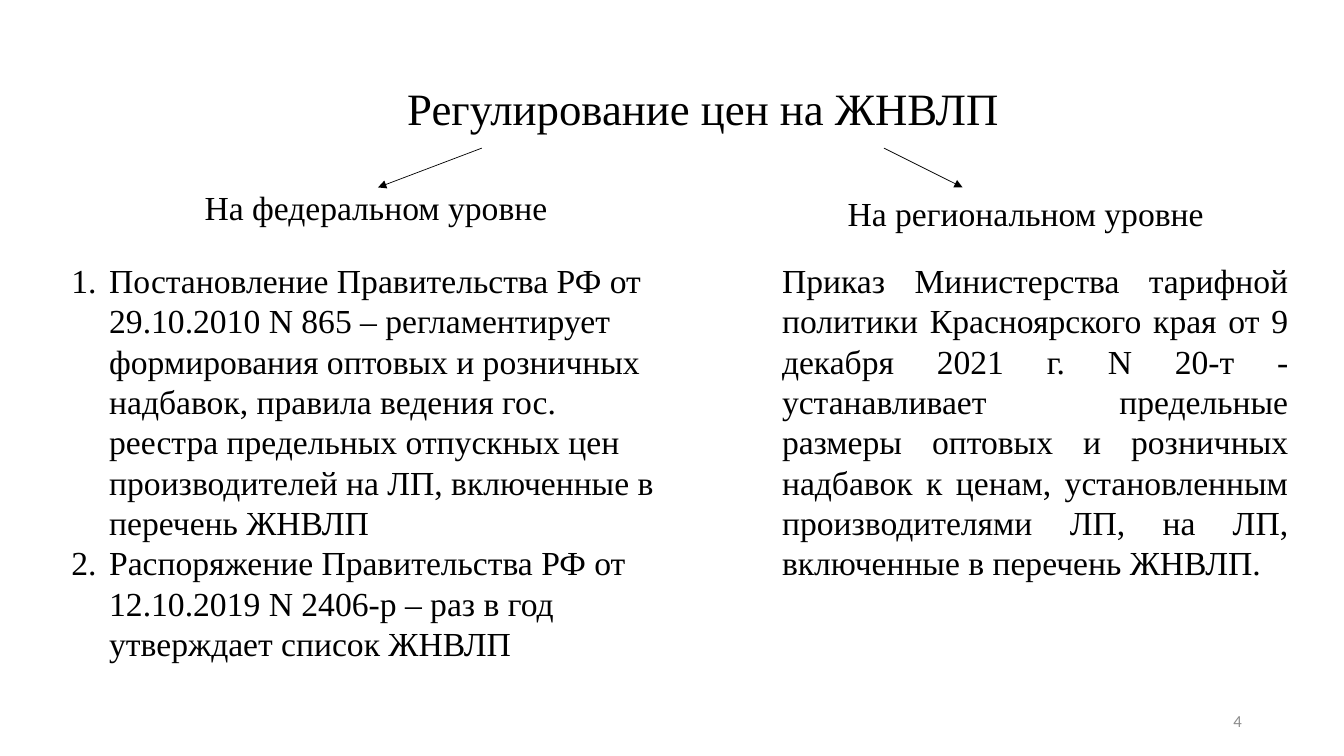
from dataclasses import dataclass

from lxml.etree import SubElement
from pptx import Presentation
from pptx.dml.color import RGBColor
from pptx.enum.shapes import MSO_CONNECTOR
from pptx.enum.text import MSO_ANCHOR, MSO_AUTO_SIZE, PP_ALIGN
from pptx.oxml.ns import qn
from pptx.util import Pt

COLOURS = {"text": "000000", "number": "8C8C8C"}
SERIF = "Times New Roman"
ARROW_TOP, ARROW_BOTTOM = 105.8, 133.9
BODY_TOP = 182.2
NUMBER_INDENT = 27


@dataclass
class TextBlock:
    left: float
    top: float
    width: float
    height: float
    paragraphs: list[str]
    size: float = 24
    font: str = SERIF
    colour: str = "text"
    align: PP_ALIGN = PP_ALIGN.LEFT
    anchor: MSO_ANCHOR = MSO_ANCHOR.TOP
    wrap: bool = False
    grow: bool = True
    numbered: bool = False


@dataclass
class Arrow:
    start: float
    end: float


TITLE = TextBlock(283.7, 54, 441.4, 46.1, ["Регулирование цен на ЖНВЛП"], size=32)

BLOCKS = [
    TextBlock(139, 130.3, 262, 36.4, ["На федеральном уровне"]),
    TextBlock(598.3, 133.9, 282.2, 36.4, ["На региональном уровне"]),
    TextBlock(43.9, BODY_TOP, 436.3, 298, [
        "Постановление Правительства РФ от 29.10.2010 N 865 – регламентирует "
        "формирования оптовых и розничных надбавок, правила ведения гос. реестра "
        "предельных отпускных цен производителей на ЛП, включенные в перечень ЖНВЛП",
        "Распоряжение Правительства РФ от 12.10.2019 N 2406-р – раз в год "
        "утверждает список ЖНВЛП",
    ], wrap=True, numbered=True),
    TextBlock(551.5, BODY_TOP, 375.8, 269.3, [
        "Приказ Министерства тарифной политики Красноярского края от 9 декабря "
        "2021 г. N 20-т - устанавливает предельные размеры оптовых и розничных "
        "надбавок к ценам, установленным производителями ЛП, на ЛП, включенные "
        "в перечень ЖНВЛП.",
    ], align=PP_ALIGN.JUSTIFY, wrap=True),
    TextBlock(678.2, 500.4, 216, 28.8, ["4"], size=12, font="Calibri", colour="number",
              align=PP_ALIGN.RIGHT, anchor=MSO_ANCHOR.MIDDLE, wrap=True, grow=False),
]

ARROWS = [Arrow(344.2, 270), Arrow(631.4, 687.6)]


def number_paragraph(para) -> None:
    properties = para._p.get_or_add_pPr()
    properties.set("marL", str(Pt(NUMBER_INDENT)))
    properties.set("indent", str(-Pt(NUMBER_INDENT)))
    SubElement(properties, qn("a:buAutoNum"), type="arabicPeriod")


def fill_box(box, block: TextBlock) -> None:
    box.left, box.top = Pt(block.left), Pt(block.top)
    box.width, box.height = Pt(block.width), Pt(block.height)
    frame = box.text_frame
    frame.word_wrap = block.wrap
    frame.auto_size = MSO_AUTO_SIZE.SHAPE_TO_FIT_TEXT if block.grow else MSO_AUTO_SIZE.NONE
    frame.vertical_anchor = block.anchor
    for index, text in enumerate(block.paragraphs):
        para = frame.add_paragraph() if index else frame.paragraphs[0]
        para.alignment = block.align
        if block.numbered:
            number_paragraph(para)
        span = para.add_run()
        span.text = text
        span.font.name = block.font
        span.font.size = Pt(block.size)
        span.font.color.rgb = RGBColor.from_string(COLOURS[block.colour])


def draw_arrow(page, arrow: Arrow) -> None:
    connector = page.shapes.add_connector(
        MSO_CONNECTOR.STRAIGHT, Pt(arrow.start), Pt(ARROW_TOP), Pt(arrow.end), Pt(ARROW_BOTTOM))
    connector.line.color.rgb = RGBColor.from_string(COLOURS["text"])
    connector.line.width = Pt(0.5)
    SubElement(connector.line._get_or_add_ln(), qn("a:tailEnd"), type="triangle")
    SubElement(connector._element.spPr, qn("a:effectLst"))


def main() -> None:
    deck = Presentation()
    deck.slide_width, deck.slide_height = Pt(960), Pt(540)
    page = deck.slides.add_slide(deck.slide_layouts.get_by_name("Title Only"))
    fill_box(page.shapes.title, TITLE)
    for arrow in ARROWS:
        draw_arrow(page, arrow)
    for block in BLOCKS:
        box = page.shapes.add_textbox(0, 0, 0, 0)
        fill_box(box, block)
    deck.save("out.pptx")


if __name__ == "__main__":
    main()
